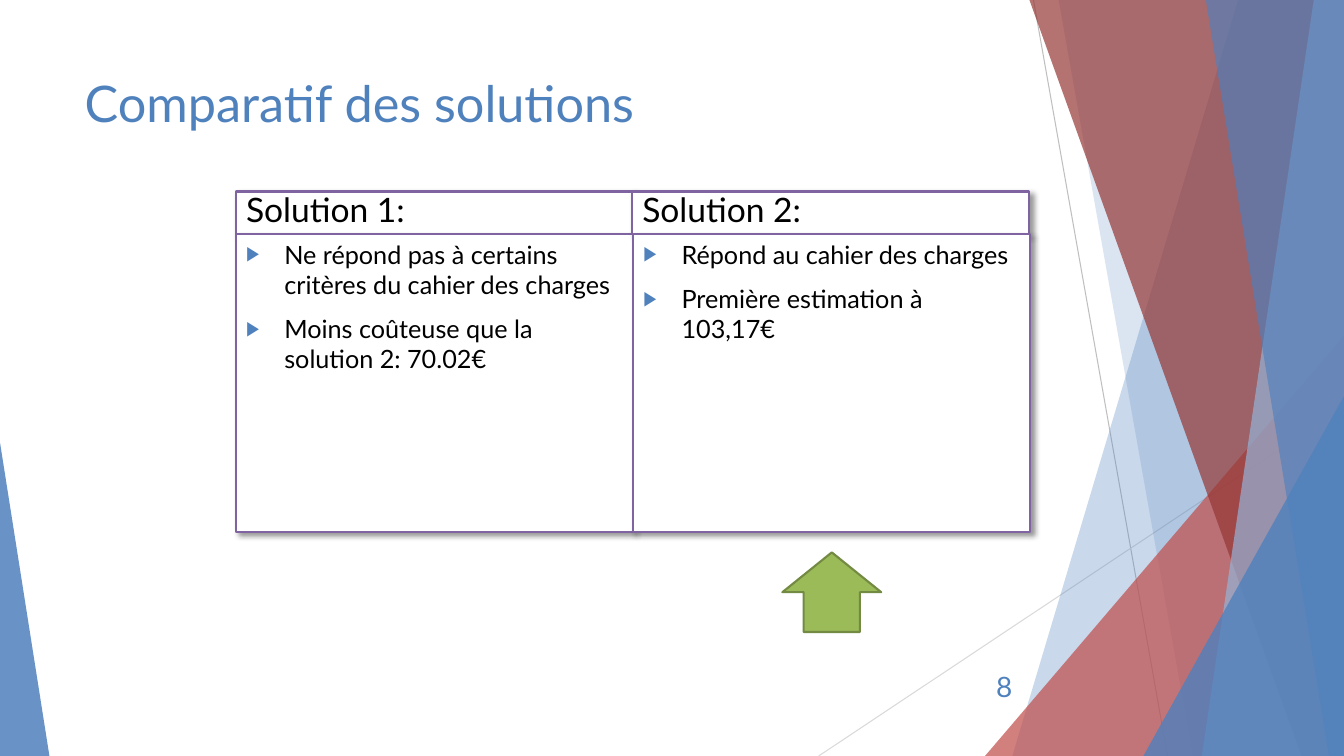
from dataclasses import dataclass

from lxml import etree
from pptx import Presentation
from pptx.dml.color import RGBColor
from pptx.enum.shapes import MSO_CONNECTOR, MSO_SHAPE
from pptx.enum.text import MSO_ANCHOR, MSO_AUTO_SIZE, PP_ALIGN
from pptx.oxml.ns import qn
from pptx.util import Inches, Pt

STRAIGHT = MSO_CONNECTOR.STRAIGHT
TRIANGLE, UP_ARROW = MSO_SHAPE.ISOSCELES_TRIANGLE, MSO_SHAPE.UP_ARROW
TOP, MIDDLE, BOTTOM = MSO_ANCHOR.TOP, MSO_ANCHOR.MIDDLE, MSO_ANCHOR.BOTTOM
LEFT, RIGHT = PP_ALIGN.LEFT, PP_ALIGN.RIGHT
NO_AUTOFIT = MSO_AUTO_SIZE.NONE
COMPARISON_LAYOUT = 4
SLIDE_WIDTH, SLIDE_HEIGHT = 13.33, 7.5


@dataclass(frozen=True)
class Theme:
    font: str = "Lato"
    title_size: int = 36
    heading_size: int = 24
    list_size: int = 18
    number_size: int = 20
    border_width: float = 1.5
    ray_width: float = 0.75
    blue: str = "4F81BD"
    pale_blue: str = "95B3D7"
    red: str = "C0504D"
    dark_red: str = "953735"
    purple: str = "8064A2"
    green: str = "9BBB59"
    dark_green: str = "738A42"
    grey: str = "BFBFBF"
    light_grey: str = "D9D9D9"
    white: str = "FFFFFF"
    black: str = "000000"


THEME = Theme()

RAYS = [
    ((10.25, 0), (11.58, SLIDE_HEIGHT), THEME.grey),
    ((SLIDE_WIDTH, 4.03), (8.12, SLIDE_HEIGHT), THEME.light_grey),
]
BACK_BANDS = [(12.28, 10.04, THEME.blue, 30), (10.5, 11.83, THEME.blue, 20)]
FRONT_BANDS = [
    (10.21, 12.91, THEME.dark_red, 70),
    (13.03, 11.92, THEME.pale_blue, 70),
    (11.96, 13.18, THEME.blue, 65),
]
SOLUTIONS = [
    (2.34, 2.34, "Solution 1:", [
        "Ne répond pas à certains critères du cahier des charges",
        "Moins coûteuse que la solution 2: 70.02€",
    ]),
    (6.27, 6.28, "Solution 2:", [
        "Répond au cahier des charges",
        "Première estimation à 103,17€",
    ]),
]


def place(shape, left, top, width, height):
    shape.left, shape.top = Inches(left), Inches(top)
    shape.width, shape.height = Inches(width), Inches(height)


def paint(shape, color, opacity=100):
    shape.shadow.inherit = False
    shape.fill.solid()
    shape.fill.fore_color.rgb = RGBColor.from_string(color)
    shape.line.fill.background()
    if opacity < 100:
        tint = shape.fill._xPr.find(qn("a:solidFill"))[0]
        etree.SubElement(tint, qn("a:alpha"), val=str(opacity * 1000))


def outline(shape, color, width):
    shape.line.color.rgb = RGBColor.from_string(color)
    shape.line.width = Pt(width)


def add_ray(slide, start, end, color):
    ray = slide.shapes.add_connector(STRAIGHT, *map(Inches, start + end))
    outline(ray, color, THEME.ray_width)
    etree.SubElement(ray._element.spPr, qn("a:effectLst"))


def add_band(slide, top_x, bottom_x, color, opacity):
    corners = [(SLIDE_WIDTH, 0), (SLIDE_WIDTH, SLIDE_HEIGHT), (bottom_x, SLIDE_HEIGHT)]
    builder = slide.shapes.build_freeform(Inches(top_x), 0)
    builder.add_line_segments([(Inches(x), Inches(y)) for x, y in corners])
    paint(builder.convert_to_shape(), color, opacity)


def add_corner(slide, left, top, width, apex, color, opacity):
    corner = slide.shapes.add_shape(
        TRIANGLE, Inches(left), Inches(top), Inches(width), Inches(SLIDE_HEIGHT - top))
    corner.adjustments[0] = apex
    paint(corner, color, opacity)


def add_facets(slide):
    for ray in RAYS:
        add_ray(slide, *ray)
    for band in BACK_BANDS:
        add_band(slide, *band)
    add_corner(slide, 9.77, 3.33, 3.56, 1, THEME.red, 72)
    for band in FRONT_BANDS:
        add_band(slide, *band)
    add_corner(slide, 11.34, 3.93, 1.99, 1, THEME.blue, 80)
    add_corner(slide, 0, 4.39, 0.49, 0, THEME.blue, 85)


def add_bullet(paragraph):
    properties = paragraph._p.get_or_add_pPr()
    properties.set("marL", str(Inches(0.38)))
    properties.set("indent", str(-Inches(0.38)))
    bullet_color = etree.SubElement(properties, qn("a:buClr"))
    etree.SubElement(bullet_color, qn("a:srgbClr"), val=THEME.blue)
    etree.SubElement(properties, qn("a:buSzPct"), val="80000")
    etree.SubElement(properties, qn("a:buChar"), char="▶")


def write(shape, lines, size, color, anchor=TOP, align=LEFT, bulleted=False):
    frame = shape.text_frame
    frame.text = "\n".join(lines)
    frame.word_wrap = True
    frame.auto_size = NO_AUTOFIT
    frame.vertical_anchor = anchor
    for index, paragraph in enumerate(frame.paragraphs):
        if bulleted:
            add_bullet(paragraph)
        paragraph.alignment = align
        paragraph.space_before = Pt(10 if index else 0)
        paragraph.font.name = THEME.font
        paragraph.font.size = Pt(size)
        paragraph.font.bold = False
        paragraph.font.color.rgb = RGBColor.from_string(color)


def style_panel(panel):
    paint(panel, THEME.white)
    outline(panel, THEME.purple, THEME.border_width)
    effects = panel._element.spPr.find(qn("a:effectLst"))
    shadow = etree.SubElement(
        effects, qn("a:outerShdw"), blurRad=str(Pt(4)), dist=str(Pt(3)),
        dir="2700000", algn="tl", rotWithShape="0")
    shade = etree.SubElement(shadow, qn("a:srgbClr"), val=THEME.black)
    etree.SubElement(shade, qn("a:alpha"), val="40000")


def fill_solution(heading, points, heading_left, points_left, name, arguments):
    place(heading, heading_left, 1.9, 3.94, 0.42)
    style_panel(heading)
    write(heading, [name], THEME.heading_size, THEME.black, BOTTOM)
    place(points, points_left, 2.32, 3.94, 2.96)
    style_panel(points)
    write(points, arguments, THEME.list_size, THEME.black, bulleted=True)


def add_choice_arrow(slide):
    arrow = slide.shapes.add_shape(
        UP_ARROW, Inches(7.76), Inches(5.48), Inches(0.98), Inches(0.79))
    arrow.adjustments[0] = 0.57
    arrow.adjustments[1] = 0.5
    paint(arrow, THEME.green)
    outline(arrow, THEME.dark_green, THEME.border_width)


def add_page_number(slide, number):
    page = slide.shapes.add_textbox(Inches(9.39), Inches(6.61), Inches(0.75), Inches(0.4))
    write(page, [number], THEME.number_size, THEME.blue, MIDDLE, RIGHT)


def main():
    deck = Presentation()
    deck.slide_width, deck.slide_height = Inches(SLIDE_WIDTH), Inches(SLIDE_HEIGHT)
    slide = deck.slides.add_slide(deck.slide_layouts[COMPARISON_LAYOUT])
    title, *bodies = slide.placeholders
    add_facets(slide)
    place(title, 0.74, 0.67, 9.4, 1.44)
    write(title, ["Comparatif des solutions"], THEME.title_size, THEME.blue)
    for heading, points, solution in zip(bodies[::2], bodies[1::2], SOLUTIONS):
        fill_solution(heading, points, *solution)
    add_page_number(slide, "8")
    add_choice_arrow(slide)
    deck.save("out.pptx")


if __name__ == "__main__":
    main()
